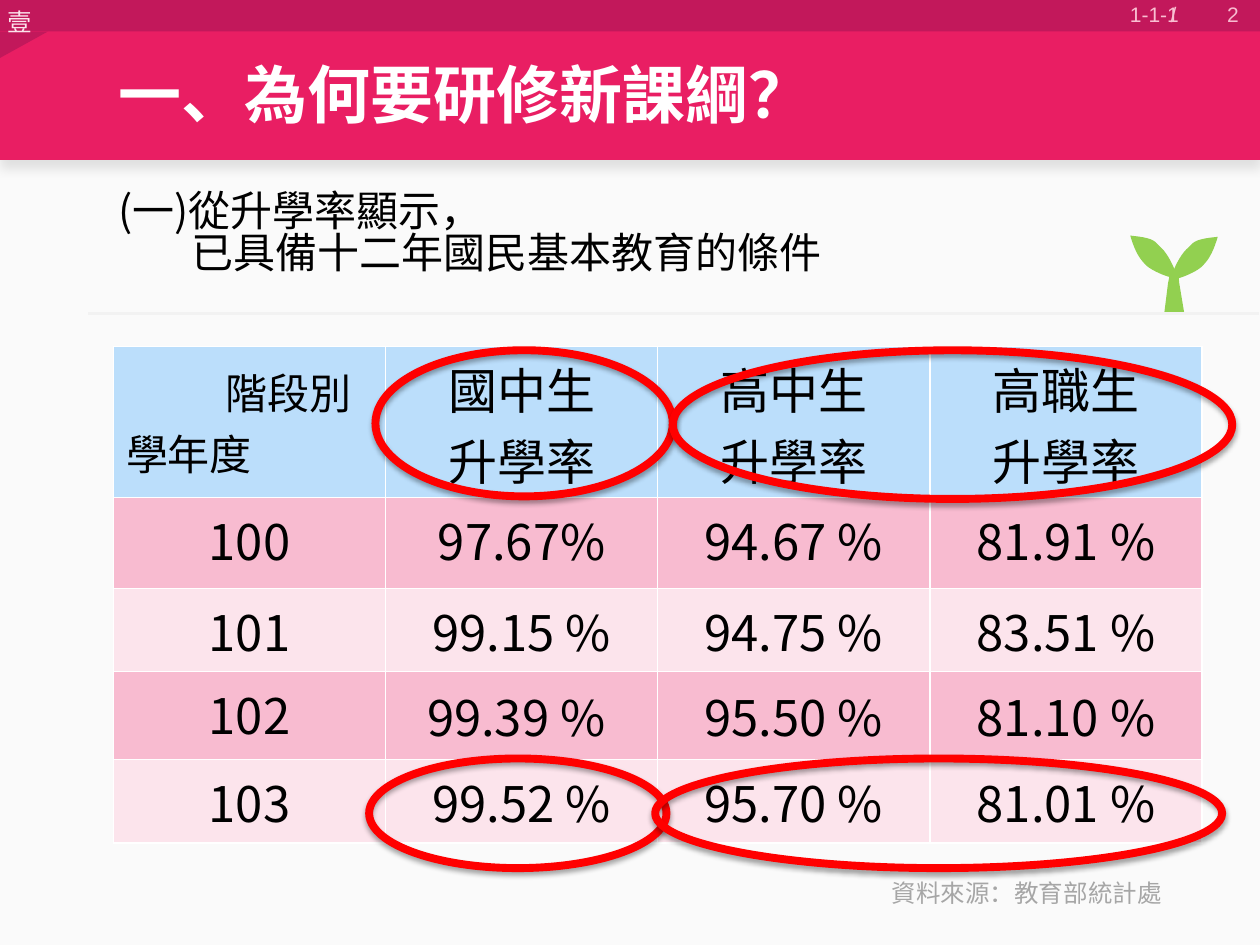
"""Build the slide on advancement rates that motivate the new curriculum."""
from lxml import etree
from pptx import Presentation
from pptx import util as u
from pptx.dml.color import RGBColor
from pptx.enum import shapes, text
from pptx.oxml.ns import qn

CJK = "Noto Sans CJK SC"
LEFT, CENTER, RIGHT = text.PP_ALIGN.LEFT, text.PP_ALIGN.CENTER, text.PP_ALIGN.RIGHT
TOP, MIDDLE = text.MSO_ANCHOR.TOP, text.MSO_ANCHOR.MIDDLE


def paint(fill, color):
    fill.solid()
    fill.fore_color.rgb = RGBColor.from_string(color)


def write(p, words, size, color, align=LEFT, font=CJK, bold=False):
    p.text = words
    p.alignment = align
    for r in p.runs:
        for key, value in dict(size=u.Pt(size), name=font, bold=bold).items():
            setattr(r.font, key, value)
        paint(r.font.fill, color)
        etree.SubElement(r.font._element, qn("a:ea"), typeface=font)


prs = Presentation()
prs.slide_width, prs.slide_height = u.Inches(10), u.Inches(7.5)
s = prs.slides.add_slide(prs.slide_layouts[5])
col, row = prs.slide_width / 100, prs.slide_height / 75

bands = []
for y, h, color in [(4.4, 70.6, "FAFAFA"), (0, 12.7, "E91E63"), (0, 2.5, "C2185B")]:
    sp = s.shapes.add_shape(shapes.MSO_SHAPE.RECTANGLE, 0, int(y * row), int(100 * col), int(h * row))
    paint(sp.fill, color)
    sp.line.fill.background()
    sp.shadow.inherit = False
    bands.append(sp)

outlines = [("C2185B", [(0, 2.5), (0, 4.6), (3.8, 2.5)])]
stem = [(92.9, 21.5), (93.5, 21.5), (93.6, 22.5), (94, 24.9), (92.4, 24.9), (92.7, 22.5)]
outlines.append(("92D050", stem))
leaf = [(93.3, 22), (93.5, 21.8), (92.8, 20.3), (92.2, 19.7), (91.6, 19.2), (91.8, 18.9), (89.7, 18.7),
        (90.1, 20), (90.4, 20.5), (91, 21.1), (91.6, 21.6), (93.1, 22.2), (93.3, 22)]
curve = []
for i in range(0, len(leaf) - 1, 3):
    for t in [n / 10 for n in range(10)]:
        weights = [(1 - t) ** 3, 3 * t * (1 - t) ** 2, 3 * t * t * (1 - t), t ** 3]
        curve.append(tuple(sum(w * pt[k] for w, pt in zip(weights, leaf[i:i + 4])) for k in (0, 1)))
mirror = [(186.35 - x, y + 0.1) for x, y in curve]
outlines += [("92D050", curve), ("92D050", mirror)]
for color, points in outlines:
    points = [(round(x * col), round(y * row)) for x, y in points]
    builder = s.shapes.build_freeform(*points[0], scale=1.0)
    builder.add_line_segments(points[1:], close=True)
    sp = builder.convert_to_shape()
    paint(sp.fill, color)
    sp.line.fill.background()
    sp.shadow.inherit = False

title = s.shapes.title
title.left, title.top, title.width, title.height = [int(n * col) for n in (8.4, 2.1, 91.6, 10.6)]
title.text_frame.vertical_anchor = MIDDLE
write(title.text_frame.paragraphs[0], "一、為何要研修新課綱？", 36, "FFFFFF", bold=True)
s.shapes._spTree.append(title._element)

labels = [
    ((-0.4, 0.1, 4, 3.4), "壹", 14, "FCE4EC", LEFT, CJK, TOP),
    ((76, -0.9, 23.3, 4), "2", 12, "F8BBD0", RIGHT, "Arial", MIDDLE),
    ((85.6, -0.4, 11.4, 3), "1-1-1\t/", 12, "F9BFD2", LEFT, "Arial", TOP),
    ((62.5, 69.2, 30.7, 3.4), "資料來源：教育部統計處", 14, "A6A6A6", RIGHT, CJK, TOP),
    ((8.4, 14.8, 88.9, 9.1), "(一)從升學率顯示，\v已具備十二年國民基本教育的條件", 24, "000000", LEFT, CJK, TOP),
]
paras = []
for (x, y, w, h), words, size, color, align, font, anchor in labels:
    sp = s.shapes.add_textbox(int(x * col), int(y * row), int(w * col), int(h * row))
    tf = sp.text_frame
    tf.word_wrap = True
    tf.vertical_anchor = anchor
    write(tf.paragraphs[0], words, size, color, align, font)
    paras.append(tf.paragraphs[0])
pPr = paras[2]._p.get_or_add_pPr()
pPr.set("marL", str(int(3.1 * col)))
pPr.set("indent", "0")
tabs = etree.SubElement(pPr, qn("a:tabLst"))
etree.SubElement(tabs, qn("a:tab"), pos=str(int(8.4 * col)), algn="l")
pPr = paras[4]._p.get_or_add_pPr()
pPr.set("marL", str(int(5.8 * col)))
pPr.set("indent", str(int(-5.8 * col)))
paras[4].line_spacing = 0.84

rows = [
    ("階段別\n學年度", "國中生\n升學率", "高中生\n升學率", "高職生\n升學率"),
    ("100", "97.67%", "94.67 %", "81.91 %"),
    ("101", "99.15 %", "94.75 %", "83.51 %"),
    ("102", "99.39 % ", "95.50 %", "81.10 %"),
    ("103", "99.52 %", "95.70 %", "81.01 %"),
]
heights = [12, 7.2, 6.6, 7, 6.6]
tbl = s.shapes.add_table(5, 4, int(9 * col), int(27.5 * row), int(86.4 * col), int(39.4 * row)).table
for c in tbl.columns:
    c.width = int(21.6 * col)
for i, (values, h) in enumerate(zip(rows, heights)):
    tbl.rows[i].height = int(h * row)
    for j, value in enumerate(values):
        cell = tbl.cell(i, j)
        paint(cell.fill, "BBDEFB" if i == 0 else "F8BBD0" if i % 2 else "FCE4EC")
        tight = i > 1 and j > 0
        cell.vertical_anchor = MIDDLE if tight or i == 0 else TOP
        if tight:
            for side in ("left", "right", "top", "bottom"):
                setattr(cell, f"margin_{side}", int(0.1 * col))
        corner = i == 0 and j == 0
        for k, line in enumerate(value.split("\n")):
            tf = cell.text_frame
            p = tf.add_paragraph() if k else tf.paragraphs[0]
            write(p, line, 24 if corner else 28, "000000", LEFT if corner else CENTER)
tbl.cell(0, 0).text_frame.paragraphs[0]._p.get_or_add_pPr().set("indent", str(int(7.9 * col)))

shadowed = [(bands[1]._element.spPr.find(qn("a:effectLst")), 10, 6, 4)]
for x, y, w, h in [(29.8, 27.8, 23.6, 11.6), (29.3, 60.2, 23.6, 8.7),
                   (53.4, 27.8, 44.4, 11.8), (52, 60.2, 45, 8.7)]:
    sp = s.shapes.add_shape(shapes.MSO_SHAPE.OVAL, int(x * col), int(y * row), int(w * col), int(h * row))
    sp.fill.background()
    paint(sp.line.fill, "FF0000")
    sp.line.width = u.Pt(4.5)
    sp.shadow.inherit = False
    shadowed.append((sp._element.spPr.find(qn("a:effectLst")), 35, 3.1, 1.8))

effects = etree.Element(qn("a:effectLst"))
title.text_frame.paragraphs[0].runs[0].font._element.find(qn("a:solidFill")).addnext(effects)
shadowed.append((effects, 30, 4, 3))
for parent, alpha, blur, dist in shadowed:
    shadow = etree.SubElement(parent, qn("a:outerShdw"), blurRad=str(int(u.Pt(blur))),
                              dist=str(int(u.Pt(dist))), dir="5400000", rotWithShape="0")
    clr = etree.SubElement(shadow, qn("a:srgbClr"), val="000000")
    etree.SubElement(clr, qn("a:alpha"), val=str(alpha * 1000))

rule = s.shapes.add_connector(shapes.MSO_CONNECTOR.STRAIGHT, int(7 * col), int(24.9 * row),
                              int(99.9 * col), int(24.9 * row))
paint(rule.line.fill, "F2F2F2")
rule.line.width = u.Pt(1.5)
etree.SubElement(rule._element.spPr, qn("a:effectLst"))

prs.save("out.pptx")
